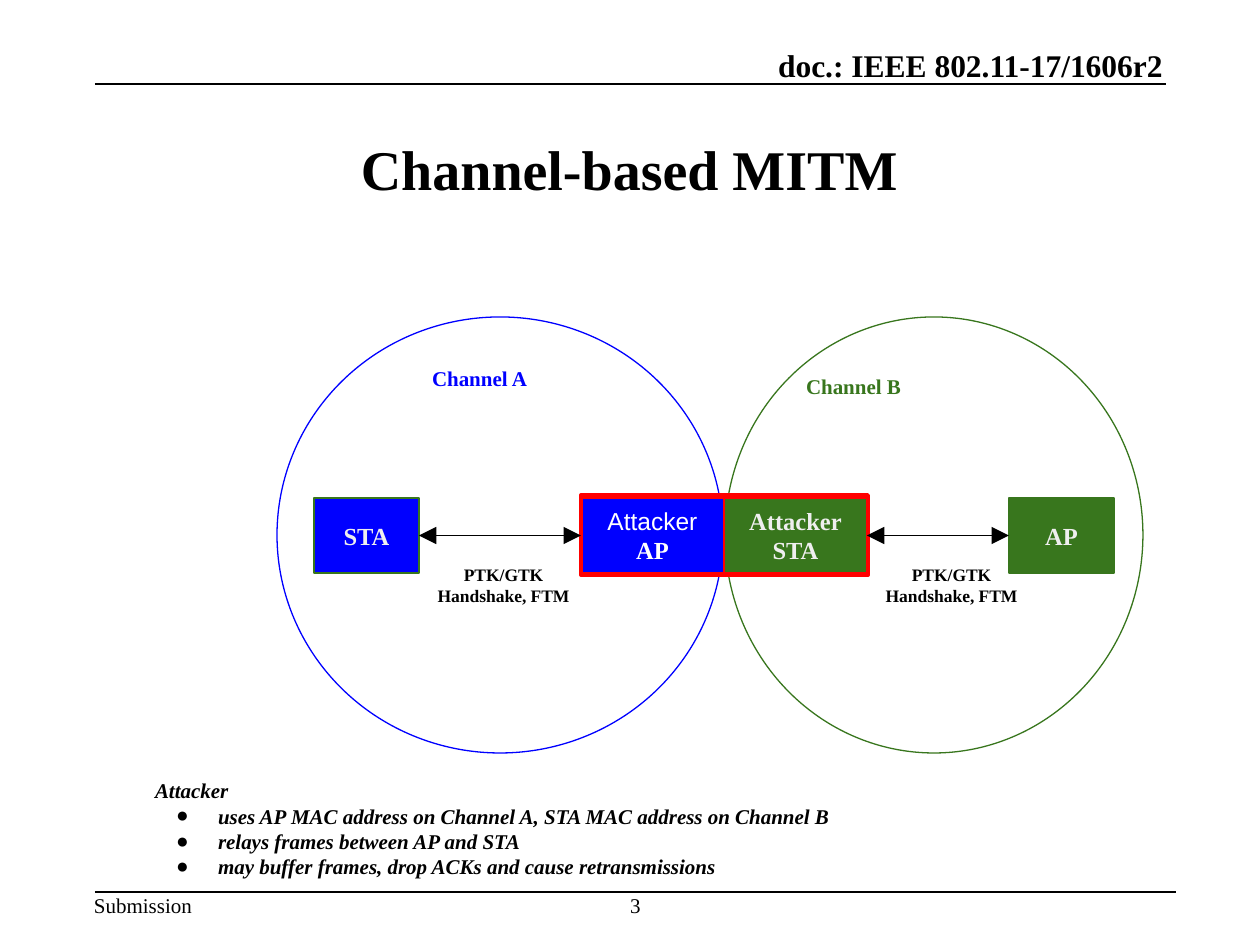
from dataclasses import dataclass

from lxml.etree import SubElement
from pptx import Presentation
from pptx.dml.color import RGBColor
from pptx.enum.shapes import MSO_CONNECTOR as Line, MSO_SHAPE as Preset
from pptx.enum.text import MSO_ANCHOR as Anchor, MSO_AUTO_SIZE as Fit, PP_ALIGN as Align
from pptx.oxml.ns import qn
from pptx.util import Emu, Pt


@dataclass(frozen=True)
class Theme:
    serif: str = "Times New Roman"
    sans: str = "Arial"
    black: str = "000000"
    white: str = "FFFFFF"
    pale: str = "EFEFEF"
    blue: str = "0000FF"
    green: str = "38761D"
    red: str = "FF0000"
    title: int = 32
    header: int = 18
    node: int = 14
    body: int = 12
    caption: int = 10
    thin: float = 0.75
    rule: int = 1
    thick: float = 2.25


theme = Theme()
PX = 914400 / 126


def place(*lengths):
    return [Emu(round(length * PX)) for length in lengths]


def write(box, text, size, color, inset=13, align=Align.CENTER,
          anchor=Anchor.TOP, bold=True, italic=False):
    frame = box.text_frame
    frame.text = text
    frame.word_wrap = True
    frame.auto_size = Fit.NONE
    frame.vertical_anchor = anchor
    frame.margin_left, frame.margin_top, frame.margin_right, frame.margin_bottom = place(*[inset] * 4)
    for para in frame.paragraphs:
        para.alignment = align
        for span in para.runs:
            span.font.name = theme.serif
            span.font.size = Pt(size)
            span.font.bold = bold
            span.font.italic = italic
            span.font.color.rgb = RGBColor.from_string(color)


deck = Presentation()
deck.slide_width, deck.slide_height = place(1260, 945)
page = deck.slides.add_slide(deck.slide_layouts[5])

title = page.shapes.title
title.left, title.top, title.width, title.height = place(94, 95, 1071, 147)
write(title, "Channel-based MITM", theme.title, theme.black, anchor=Anchor.MIDDLE)

furniture = [
    ("doc.: IEEE 802.11-17/1606r2", (640, 46, 523, 38), theme.header, Align.RIGHT, Anchor.BOTTOM, True),
    ("Submission", (94, 893, 115, 25), theme.body, Align.LEFT, Anchor.TOP, False),
    ("3", (599, 893, 73, 25), theme.body, Align.CENTER, Anchor.TOP, False),
]
for text, area, size, align, anchor, bold in furniture:
    box = page.shapes.add_textbox(*place(*area))
    write(box, text, size, theme.black, 0, align, anchor, bold)

NODE_TOP, NODE_HEIGHT = 498, 75
MIDDLE = 535
outlines = [
    ("Circle A", Preset.OVAL, (277, 317, 446, 436), theme.white, theme.blue, theme.thin, ""),
    ("Circle B", Preset.OVAL, (725, 317, 418, 436), None, theme.green, theme.thin, ""),
    ("Attacker AP", Preset.RECTANGLE, (581, NODE_TOP, 143, NODE_HEIGHT), theme.blue, theme.red, theme.thin, "Attacker\nAP"),
    ("Attacker STA", Preset.RECTANGLE, (724, NODE_TOP, 143, NODE_HEIGHT), theme.green, theme.red, theme.thin, "Attacker\nSTA"),
    ("AP", Preset.RECTANGLE, (1009, NODE_TOP, 105, NODE_HEIGHT), theme.green, theme.green, theme.thin, "AP"),
    ("STA", Preset.RECTANGLE, (314, NODE_TOP, 105, NODE_HEIGHT), theme.blue, theme.green, theme.thin, "STA"),
    ("Attacker frame", Preset.RECTANGLE, (581, 495, 287, 80), None, theme.red, theme.thick, ""),
]
nodes = {}
for role, preset, area, fill, stroke, weight, text in outlines:
    shape = page.shapes.add_shape(preset, *place(*area))
    shape.shadow.inherit = False
    if fill:
        shape.fill.solid()
        shape.fill.fore_color.rgb = RGBColor.from_string(fill)
    else:
        shape.fill.background()
    shape.line.color.rgb = RGBColor.from_string(stroke)
    shape.line.width = Pt(weight)
    if text:
        write(shape, text, theme.node, theme.pale, anchor=Anchor.MIDDLE)
    nodes[role] = shape

first, second = nodes["Attacker AP"].text_frame.paragraphs
for span in first.runs + second.runs:
    span.font.color.rgb = RGBColor.from_string(theme.white)
first.runs[0].font.name = theme.sans
first.runs[0].font.bold = False

connections = [
    ((95, 84, 1166, 84), theme.rule, None),
    ((95, 892, 1176, 892), theme.rule, None),
    ((419, MIDDLE, 581, MIDDLE), theme.thin, ("STA", "Attacker AP")),
    ((867, MIDDLE, 1009, MIDDLE), theme.thin, ("Attacker STA", "AP")),
]
for ends, weight, joined in connections:
    link = page.shapes.add_connector(Line.STRAIGHT, *place(*ends))
    link.line.color.rgb = RGBColor.from_string(theme.black)
    link.line.width = Pt(weight)
    if joined:
        link.begin_connect(nodes[joined[0]], 3)
        link.end_connect(nodes[joined[1]], 1)
        for end in ("a:headEnd", "a:tailEnd"):
            SubElement(link.line._get_or_add_ln(), qn(end), type="triangle", w="lg", len="lg")
    SubElement(link._element.spPr, qn("a:effectLst"))

labels = [
    ("Channel A", 419, 353, theme.body, theme.blue, Align.LEFT),
    ("Channel B", 793, 361, theme.body, theme.green, Align.LEFT),
    ("PTK/GTK Handshake, FTM", 419, 551, theme.caption, theme.black, Align.CENTER),
    ("PTK/GTK Handshake, FTM", 867, 551, theme.caption, theme.black, Align.CENTER),
]
for text, left, top, size, color, align in labels:
    box = page.shapes.add_textbox(*place(left, top, 169, 53))
    write(box, text, size, color, align=align)

notes = [
    "Attacker",
    "uses AP MAC address on Channel A, STA MAC address on Channel B",
    "relays frames between AP and STA",
    "may buffer frames, drop ACKs and cause retransmissions",
]
box = page.shapes.add_textbox(*place(142, 765, 776, 118))
write(box, "\n".join(notes), theme.body, theme.black, align=Align.LEFT, italic=True)
margin, hanging = place(63, -42)
for para in box.text_frame.paragraphs[1:]:
    props = para._p.get_or_add_pPr()
    props.set("marL", str(margin))
    props.set("indent", str(hanging))
    SubElement(SubElement(props, qn("a:buClr")), qn("a:srgbClr"), val=theme.black)
    SubElement(props, qn("a:buFont"), typeface=theme.serif)
    SubElement(props, qn("a:buChar"), char="●")

deck.save("out.pptx")
